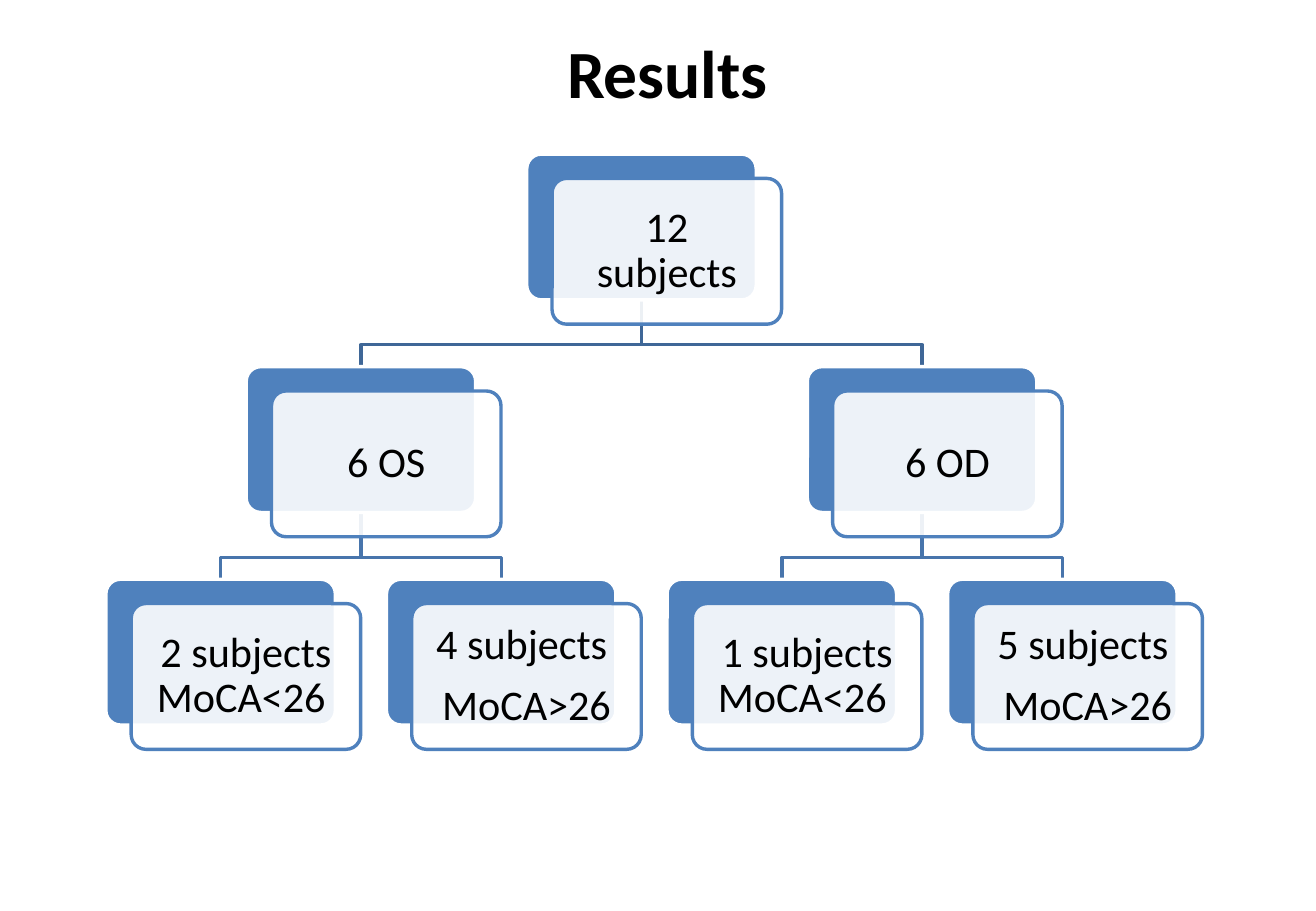
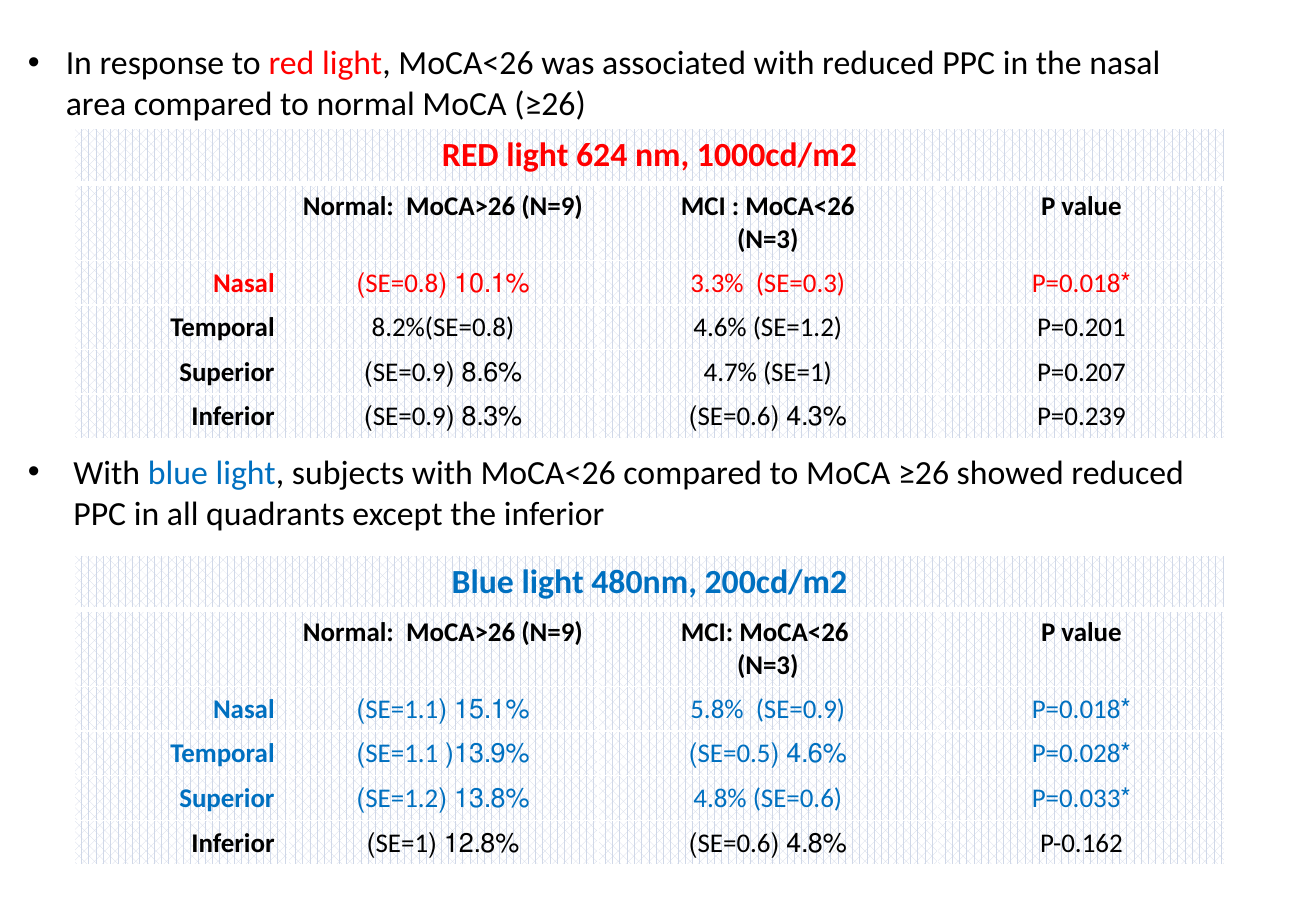
"""Build two result slides: a subject breakdown tree and two light-response tables."""
from dataclasses import dataclass
from typing import Optional

from lxml.etree import SubElement
from pptx import Presentation
from pptx.dml.color import RGBColor
from pptx.enum.dml import MSO_PATTERN
from pptx.enum.shapes import MSO_SHAPE
from pptx.enum.text import MSO_ANCHOR, MSO_AUTO_SIZE, PP_ALIGN as Align
from pptx.oxml import parse_xml
from pptx.oxml.ns import nsdecls, qn
from pptx.util import Pt

FONT = "Calibri"
BLACK = RGBColor(0x00, 0x00, 0x00)
WHITE = RGBColor(0xFF, 0xFF, 0xFF)
RED = RGBColor(0xFF, 0x00, 0x00)
BLUE = RGBColor(0x00, 0x70, 0xC0)
CARD_BLUE = RGBColor(0x4F, 0x81, 0xBD)
HATCH = RGBColor(0xD0, 0xD8, 0xE8)
BRANCH_COLORS = (RGBColor(0x3F, 0x67, 0x97), RGBColor(0x48, 0x75, 0xAC))

CARD_W, CARD_H = 136, 86.4
TREE_LEFT, TREE_TOP = 62.8, 91.4
SLOT_PITCH, LEVEL_PITCH = 166.3, 126
PANEL_DX, PANEL_DY = 15, 14.4
BRANCH_DROP = 26.6

TABLE_LEFT = 44
COLUMN_WIDTHS = (126.8, 183.6, 201.4, 170.4)
ROW_HEIGHTS = (32.4, 39, 25.2, 23.8, 23, 23)


@dataclass(frozen=True)
class Node:
    """A group of subjects, placed by level and by leaf slot."""
    slot: float
    lines: tuple[str, ...]
    children: tuple["Node", ...] = ()


@dataclass(frozen=True)
class Quadrant:
    """One table row; the flags give the reading direction of its values."""
    name: str
    normal: str
    mci: str
    p_value: str
    color: RGBColor = BLACK
    normal_rtl: bool = True
    mci_rtl: bool = False


@dataclass(frozen=True)
class LightTable:
    """The measurements taken under one light."""
    top: float
    title: str
    color: RGBColor
    mci_heading: str
    quadrants: tuple[Quadrant, ...]


@dataclass(frozen=True)
class Finding:
    """A bullet with one coloured phrase."""
    before: str
    phrase: str
    after: str
    color: RGBColor
    indent: float
    gap: float


SUBJECTS = Node(1.5, ("12 subjects",), (
    Node(0.5, ("6 OS",), (
        Node(0, ("2 subjects MoCA<26 ",)),
        Node(1, ("4 subjects ", "MoCA>26")),
    )),
    Node(2.5, ("6 OD",), (
        Node(2, ("1 subjects MoCA<26 ",)),
        Node(3, ("5 subjects ", "MoCA>26")),
    )),
))

FINDINGS = (
    Finding("In response to ", "red light", ", MoCA<26 was associated with reduced PPC "
            "in the nasal area compared to normal MoCA (≥26)", RED, 22.5, 0),
    Finding("With ", "blue light", ", subjects with MoCA<26 compared to MoCA ≥26 showed "
            "reduced PPC in all quadrants except the inferior", BLUE, 27, 195),
)

LIGHT_TABLES = (
    LightTable(329, "Blue light 480nm, 200cd/m2", BLUE, "MCI: MoCA<26 \n(N=3)", (
        Quadrant("Nasal", "15.1% (SE=1.1)", "5.8%  (SE=0.9)", "*P=0.018", BLUE),
        Quadrant("Temporal", "13.9%( SE=1.1)", "4.6% (SE=0.5)", "*P=0.028", BLUE, mci_rtl=True),
        Quadrant("Superior", "13.8% (SE=1.2)", "4.8% (SE=0.6)", "*P=0.033", BLUE),
        Quadrant("Inferior", "12.8% (SE=1)", "4.8% (SE=0.6)", "P-0.162", mci_rtl=True),
    )),
    LightTable(76.3, "RED light 624 nm, 1000cd/m2", RED, "MCI : MoCA<26\n(N=3)", (
        Quadrant("Nasal", "10.1% (SE=0.8)", "3.3%  (SE=0.3)", "*P=0.018", RED),
        Quadrant("Temporal", "8.2%(SE=0.8)", "4.6% (SE=1.2)", "P=0.201", normal_rtl=False),
        Quadrant("Superior", "8.6% (SE=0.9)", "4.7% (SE=1)", "P=0.207"),
        Quadrant("Inferior", "8.3% (SE=0.9)", "4.3% (SE=0.6)", "P=0.239", mci_rtl=True),
    )),
)


def write(paragraph, text: str, *, size: float, color: RGBColor = BLACK, bold: bool = False,
          align: Optional[Align] = None, rtl: bool = False) -> None:
    """Append formatted text to a paragraph, with a line break at each newline."""
    if align is not None:
        paragraph.alignment = align
    if rtl:
        paragraph._p.get_or_add_pPr().set("rtl", "1")
    for index, line in enumerate(text.split("\n")):
        if index:
            paragraph.add_line_break()
        run = paragraph.add_run()
        run.text = line
        run.font.name = FONT
        run.font.size = Pt(size)
        run.font.bold = bold
        run.font.color.rgb = color


def add_text_frame(slide, left: float, top: float, width: float, height: float):
    """Add a wrapping text box that grows with its text."""
    frame = slide.shapes.add_textbox(Pt(left), Pt(top), Pt(width), Pt(height)).text_frame
    frame.word_wrap = True
    frame.auto_size = MSO_AUTO_SIZE.SHAPE_TO_FIT_TEXT
    return frame


def card_origin(node: Node, level: int) -> tuple[float, float]:
    """Return the left and top of a node's back card."""
    return TREE_LEFT + node.slot * SLOT_PITCH, TREE_TOP + level * LEVEL_PITCH


def draw_branches(slide, node: Node, level: int = 0) -> None:
    """Draw the elbow lines from a node down to all its descendants."""
    left, top = card_origin(node, level)
    start_x, start_y = left + CARD_W / 2, top + CARD_H
    for child in node.children:
        child_left, child_top = card_origin(child, level + 1)
        end_x, bend_y = child_left + CARD_W / 2, start_y + BRANCH_DROP
        builder = slide.shapes.build_freeform(Pt(start_x), Pt(start_y))
        corners = ((start_x, bend_y), (end_x, bend_y), (end_x, child_top))
        builder.add_line_segments([(Pt(x), Pt(y)) for x, y in corners], close=False)
        branch = builder.convert_to_shape()
        branch.shadow.inherit = False
        branch.fill.background()
        branch.line.color.rgb = BRANCH_COLORS[level]
        branch.line.width = Pt(2)
        draw_branches(slide, child, level + 1)


def add_card(slide, left: float, top: float, fill: RGBColor, line: RGBColor):
    """Add one rounded card."""
    card = slide.shapes.add_shape(MSO_SHAPE.ROUNDED_RECTANGLE, Pt(left), Pt(top),
                                  Pt(CARD_W), Pt(CARD_H))
    card.adjustments[0] = 0.1
    card.shadow.inherit = False
    card.fill.solid()
    card.fill.fore_color.rgb = fill
    card.line.color.rgb = line
    card.line.width = Pt(2)
    return card


def draw_cards(slide, node: Node, level: int = 0) -> None:
    """Draw the back card and the labelled panel of a node and its descendants."""
    left, top = card_origin(node, level)
    add_card(slide, left, top, CARD_BLUE, WHITE)
    panel = add_card(slide, left + PANEL_DX, top + PANEL_DY, WHITE, CARD_BLUE)
    panel_color = panel._element.spPr.find(qn("a:solidFill")).find(qn("a:srgbClr"))
    SubElement(panel_color, qn("a:alpha"), val="90000")
    frame = panel.text_frame
    frame.word_wrap = True
    frame.vertical_anchor = MSO_ANCHOR.MIDDLE
    frame.margin_left = frame.margin_right = frame.margin_top = frame.margin_bottom = Pt(9.7)
    for index, line in enumerate(node.lines):
        paragraph = frame.add_paragraph() if index else frame.paragraphs[0]
        paragraph.line_spacing = 0.9
        paragraph.space_after = Pt(8.75)
        write(paragraph, line, size=25, align=Align.CENTER)
    for child in node.children:
        draw_cards(slide, child, level + 1)


def style_cell(cell, row: int) -> None:
    """Give a cell its hatch, white borders and margins."""
    cell.margin_left = cell.margin_right = Pt(8)
    cell.fill.patterned()
    cell.fill.pattern = MSO_PATTERN.PERCENT_60
    cell.fill.fore_color.rgb = HATCH
    cell.fill.back_color.rgb = WHITE
    widths = {"lnL": 1, "lnR": 1, "lnT": 3 if row == 1 else 1, "lnB": 3 if row == 0 else 1}
    for index, (edge, width) in enumerate(widths.items()):
        cell._tc.get_or_add_tcPr().insert(index, parse_xml(
            f'<a:{edge} {nsdecls("a")} w="{Pt(width)}"><a:solidFill>'
            f'<a:srgbClr val="{WHITE}"/></a:solidFill></a:{edge}>'))


def draw_light_table(slide, light: LightTable) -> None:
    """Draw the table of one light."""
    table = slide.shapes.add_table(len(ROW_HEIGHTS), len(COLUMN_WIDTHS), Pt(TABLE_LEFT),
                                   Pt(light.top), Pt(sum(COLUMN_WIDTHS)),
                                   Pt(sum(ROW_HEIGHTS))).table
    table.first_row = table.horz_banding = False
    for column, width in zip(table.columns, COLUMN_WIDTHS):
        column.width = Pt(width)
    for index, height in enumerate(ROW_HEIGHTS):
        table.rows[index].height = Pt(height)
        for cell in table.rows[index].cells:
            style_cell(cell, index)

    def fill(row: int, column: int, text: str, **style) -> None:
        """Write one cell, centred and in 16 pt unless told otherwise."""
        write(table.cell(row, column).text_frame.paragraphs[0], text,
              **{"size": 16, "align": Align.CENTER, **style})

    table.cell(0, 0).merge(table.cell(0, len(COLUMN_WIDTHS) - 1))
    fill(0, 0, light.title, size=20, color=light.color, bold=True)
    headings = ("Normal:  MoCA>26 (N=9)", light.mci_heading, "P value")
    for column, heading in enumerate(headings, start=1):
        fill(1, column, heading, bold=True)
    for row, quadrant in enumerate(light.quadrants, start=2):
        color = quadrant.color
        fill(row, 0, quadrant.name, color=color, bold=True, align=Align.RIGHT)
        fill(row, 1, quadrant.normal, color=color, rtl=quadrant.normal_rtl)
        fill(row, 2, quadrant.mci, color=color, rtl=quadrant.mci_rtl)
        fill(row, 3, quadrant.p_value, color=color, rtl=True)


def draw_findings(slide) -> None:
    """Draw the bulleted findings above the tables."""
    frame = add_text_frame(slide, 9.4, 20.9, 700.6, 312.5)
    for index, finding in enumerate(FINDINGS):
        paragraph = frame.add_paragraph() if index else frame.paragraphs[0]
        properties = paragraph._p.get_or_add_pPr()
        properties.set("marL", str(Pt(finding.indent)))
        properties.set("indent", str(-Pt(finding.indent)))
        SubElement(properties, qn("a:buFont"), typeface="Arial")
        SubElement(properties, qn("a:buChar"), char="•")
        if finding.gap:
            paragraph.space_before = Pt(finding.gap)
        write(paragraph, finding.before, size=20)
        write(paragraph, finding.phrase, size=20, color=finding.color)
        write(paragraph, finding.after, size=20)


def main() -> None:
    """Build and save the presentation."""
    deck = Presentation()
    deck.slide_width, deck.slide_height = Pt(780), Pt(540)
    blank = deck.slide_layouts[6]

    tree_slide = deck.slides.add_slide(blank)
    title = add_text_frame(tree_slide, 18.7, 15.1, 753.8, 55.4)
    write(title.paragraphs[0], "Results", size=40, bold=True, align=Align.CENTER)
    draw_branches(tree_slide, SUBJECTS)
    draw_cards(tree_slide, SUBJECTS)

    table_slide = deck.slides.add_slide(blank)
    draw_findings(table_slide)
    for light in LIGHT_TABLES:
        draw_light_table(table_slide, light)

    deck.save("out.pptx")


if __name__ == "__main__":
    main()
